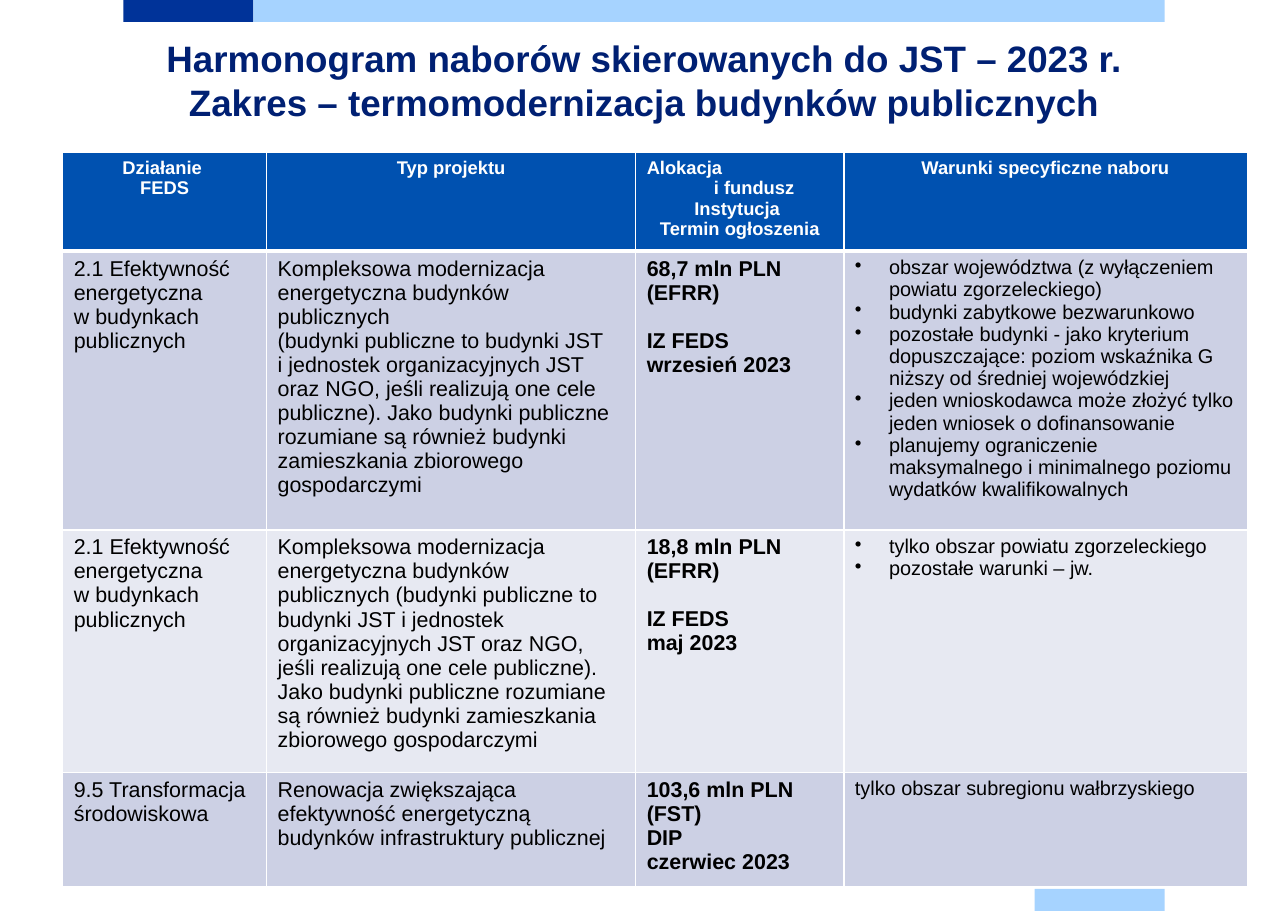
"""Build the 2023 call schedule slide on energy retrofits of public buildings."""
import copy
import dataclasses

import pptx
import pptx.dml.color
import pptx.enum.shapes
import pptx.enum.text
import pptx.oxml
import pptx.oxml.ns
import pptx.util
from pptx.util import Inches


@dataclasses.dataclass
class Theme:
    font: str = "Arial"
    navy: str = "003399"
    sky: str = "A6D3FF"
    title: str = "002073"
    header: str = "0051B0"
    band_dark: str = "CCD0E4"
    band_light: str = "E7E9F2"
    white: str = "FFFFFF"
    black: str = "000000"
    title_size: float = 24
    header_size: float = 12
    body_size: float = 14
    terms_size: float = 13


theme = Theme()
rgb = pptx.dml.color.RGBColor.from_string
align = pptx.enum.text.PP_ALIGN
qn = pptx.oxml.ns.qn
namespace = pptx.oxml.ns.nsdecls("a")


def write(frame, lines, size, color=theme.black, bold=False, alignment=align.LEFT,
          bullet=False, spacing=None, gap_before=None, indents=None):
    """Fill a text frame with one formatted paragraph per line."""
    for index, text in enumerate(lines):
        para = frame.paragraphs[0] if index == 0 else frame.add_paragraph()
        para.text = text
        para.alignment = alignment
        properties = para._p.get_or_add_pPr()
        if bullet:
            properties.set("marL", str(Inches(0.31)))
            properties.set("indent", str(Inches(-0.31)))
            properties.append(pptx.oxml.parse_xml(f'<a:buChar {namespace} char="•"/>'))
        if indents and text in indents:
            properties.set("marL", str(Inches(indents[text])))
            if indents[text] == 0:
                para.alignment = align.LEFT
        if spacing:
            para.line_spacing = pptx.util.Pt(spacing)
        if text == gap_before:
            para.space_before = pptx.util.Pt(15.6)
        for span in para.runs:
            span.font.name = theme.font
            span.font.size = pptx.util.Pt(size)
            span.font.bold = bold
            span.font.color.rgb = rgb(color)
        for line_break in para._p.findall(qn("a:br")):
            line_break.append(copy.deepcopy(para.runs[0]._r.rPr))


deck = pptx.Presentation()
deck.slide_width, deck.slide_height = Inches(11.69), Inches(8.27)
page = deck.slides.add_slide(deck.slide_layouts[6])

for left, top, width, color in [
    (1.12, 0, 1.18, theme.navy),
    (2.3, 0, 8.27, theme.sky),
    (9.39, 8.07, 1.18, theme.sky),
]:
    bar = page.shapes.add_shape(pptx.enum.shapes.MSO_SHAPE.RECTANGLE,
                                Inches(left), Inches(top), Inches(width), Inches(0.2))
    bar.shadow.inherit = False
    bar.fill.solid()
    bar.fill.fore_color.rgb = rgb(color)
    bar.line.fill.background()

box = page.shapes.add_textbox(Inches(1.12), Inches(0.27), Inches(9.45), Inches(0.91))
box.text_frame.word_wrap = True
box.text_frame.vertical_anchor = pptx.enum.text.MSO_ANCHOR.MIDDLE
write(box.text_frame,
      ["Harmonogram naborów skierowanych do JST – 2023 r. "
       "Zakres – termomodernizacja budynków publicznych"],
      size=theme.title_size, color=theme.title, bold=True,
      alignment=align.CENTER, spacing=28.8)

headings = [
    ["Działanie \vFEDS"],
    ["Typ projektu"],
    ["Alokacja", "i fundusz", "Instytucja ", "Termin ogłoszenia"],
    ["Warunki specyficzne naboru"],
]
efficiency = ["2.1 Efektywność energetyczna \vw budynkach publicznych"]
modernisation = "Kompleksowa modernizacja energetyczna budynków publicznych"
public_bodies = ("jednostek organizacyjnych JST oraz NGO, jeśli realizują one cele publiczne). "
                 "Jako budynki publiczne rozumiane są również budynki zamieszkania "
                 "zbiorowego gospodarczymi")
calls = [
    [
        efficiency,
        [modernisation, "(budynki publiczne to budynki JST \vi " + public_bodies],
        ["68,7 mln PLN (EFRR)", "IZ FEDS", "wrzesień 2023"],
        ["obszar województwa (z wyłączeniem powiatu zgorzeleckiego)",
         "budynki zabytkowe bezwarunkowo",
         "pozostałe budynki - jako kryterium dopuszczające: poziom wskaźnika G "
         "niższy od średniej wojewódzkiej",
         "jeden wnioskodawca może złożyć tylko jeden wniosek o dofinansowanie",
         "planujemy ograniczenie maksymalnego i minimalnego poziomu "
         "wydatków kwalifikowalnych"],
    ],
    [
        efficiency,
        [modernisation + " (budynki publiczne to budynki JST i " + public_bodies],
        ["18,8 mln PLN (EFRR)", "IZ FEDS", "maj 2023"],
        ["tylko obszar powiatu zgorzeleckiego", "pozostałe warunki – jw."],
    ],
    [
        ["9.5 Transformacja środowiskowa"],
        ["Renowacja zwiększająca efektywność energetyczną "
         "budynków infrastruktury publicznej"],
        ["103,6 mln PLN (FST)", "DIP", "czerwiec 2023"],
        ["tylko obszar subregionu wałbrzyskiego"],
    ],
]

column_widths = [1.85, 3.35, 1.89, 3.66]
row_heights = [0.89, 2.53, 2.2, 1.03]
table = page.shapes.add_table(
    len(row_heights), len(column_widths), Inches(0.57), Inches(1.38),
    Inches(sum(column_widths)), Inches(sum(row_heights))).table
for column, width in zip(table.columns, column_widths):
    column.width = Inches(width)
for row, height in zip(table.rows, row_heights):
    row.height = Inches(height)

for row_index, contents in enumerate([headings, *calls]):
    band = theme.band_dark if row_index % 2 else theme.band_light
    for column_index, lines in enumerate(contents):
        cell = table.cell(row_index, column_index)
        for side in ["L", "R", "T", "B"]:
            below_header = (row_index, side) in [(0, "B"), (1, "T")]
            cell._tc.get_or_add_tcPr().append(pptx.oxml.parse_xml(
                f'<a:ln{side} {namespace} w="{pptx.util.Pt(3 if below_header else 1)}">'
                f'<a:solidFill><a:srgbClr val="{theme.white}"/></a:solidFill></a:ln{side}>'))
        cell.fill.solid()
        cell.fill.fore_color.rgb = rgb(band if row_index else theme.header)
        if row_index == 0:
            write(cell.text_frame, lines, size=theme.header_size, color=theme.white,
                  bold=True, alignment=align.CENTER,
                  indents={"Alokacja": 0, "i fundusz": 0.26})
        elif column_index == 3:
            write(cell.text_frame, lines, size=theme.terms_size, bullet=len(lines) > 1)
        else:
            write(cell.text_frame, lines, size=theme.body_size,
                  bold=column_index == 2, gap_before="IZ FEDS")

deck.save("out.pptx")
